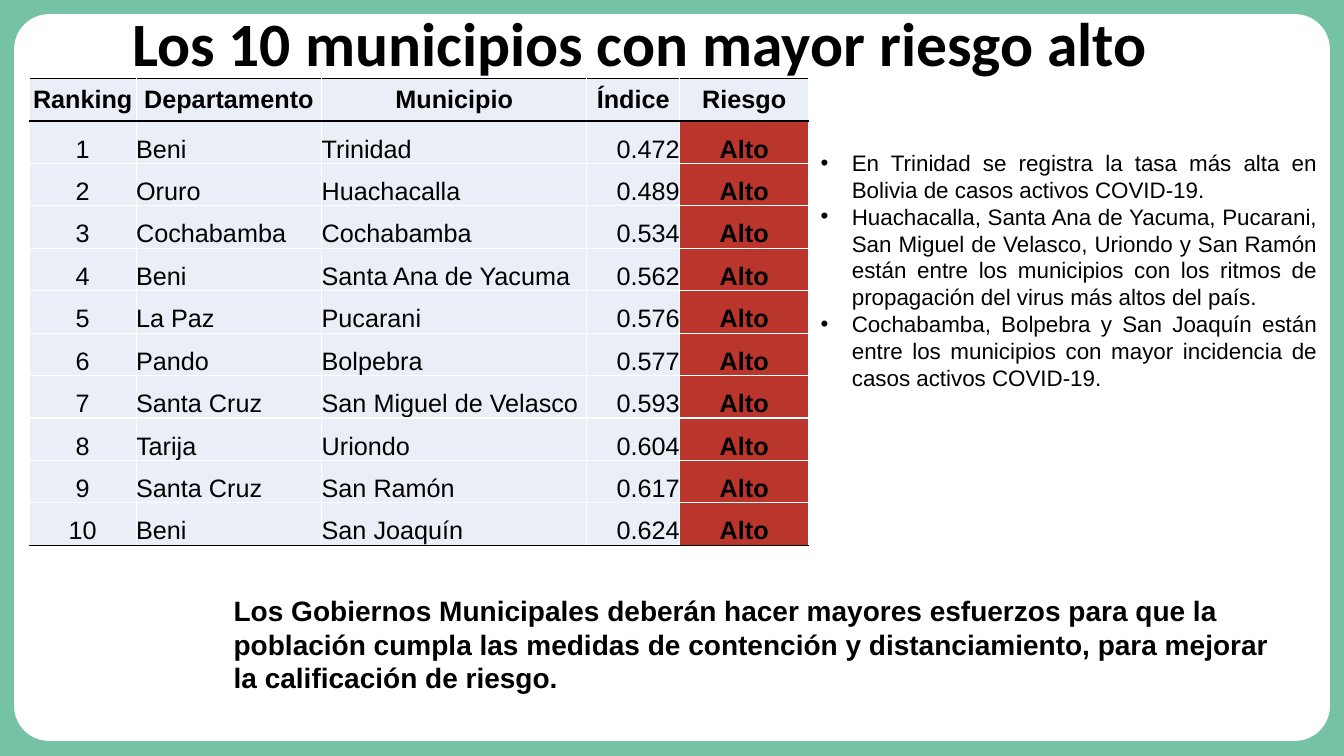
from pptx import Presentation, util as u
from pptx.dml.color import RGBColor
from pptx.enum import shapes, text
from pptx.oxml import parse_xml
from pptx.oxml.ns import nsdecls

GREEN = RGBColor(0x76, 0xC2, 0xA5)
WHITE = RGBColor(0xFF, 0xFF, 0xFF)
BLACK = RGBColor(0x00, 0x00, 0x00)
PALE = RGBColor(0xEA, 0xEF, 0xF7)
RED = RGBColor(0xBA, 0x36, 0x2C)
WIDE, HIGH = u.Inches(13.33), u.Inches(7.5)
ALIGN = text.PP_ALIGN
ANCHOR = text.MSO_ANCHOR

HEADS = ["Ranking", "Departamento", "Municipio", "Índice", "Riesgo"]
TOWNS = [
    ("Beni", "Trinidad", "0.472"),
    ("Oruro", "Huachacalla", "0.489"),
    ("Cochabamba", "Cochabamba", "0.534"),
    ("Beni", "Santa Ana de Yacuma", "0.562"),
    ("La Paz", "Pucarani", "0.576"),
    ("Pando", "Bolpebra", "0.577"),
    ("Santa Cruz", "San Miguel de Velasco", "0.593"),
    ("Tarija", "Uriondo", "0.604"),
    ("Santa Cruz", "San Ramón", "0.617"),
    ("Beni", "San Joaquín", "0.624"),
]
SHARES = [106, 184, 263, 92, 128]
SIDES = [ALIGN.CENTER, ALIGN.LEFT, ALIGN.LEFT, ALIGN.RIGHT, ALIGN.CENTER]
NOTES = [
    "En Trinidad se registra la tasa más alta en Bolivia de casos activos COVID-19.",
    "Huachacalla, Santa Ana de Yacuma, Pucarani, San Miguel de Velasco, Uriondo y San Ramón "
    "están entre los municipios con los ritmos de propagación del virus más altos del país.",
    "Cochabamba, Bolpebra y San Joaquín están entre los municipios con mayor incidencia de "
    "casos activos COVID-19.",
]
ADVICE = ("Los Gobiernos Municipales deberán hacer mayores esfuerzos para que la población "
          "cumpla las medidas de contención y distanciamiento, para mejorar la calificación "
          "de riesgo.")


def area(x, y, w, h):
    return [int(size * part / 100)
            for size, part in zip((WIDE, HIGH, WIDE, HIGH), (x, y, w, h))]


def apply(item, **values):
    for name, value in values.items():
        setattr(item, name, value)


def write(para, words, size, bold=False, side=ALIGN.LEFT, face="Arial"):
    para.alignment = side
    run = para.add_run()
    run.text = words
    apply(run.font, name=face, size=u.Pt(size), bold=bold)
    run.font.color.rgb = BLACK


def add_panel(slide, box):
    panel = slide.shapes.add_shape(shapes.MSO_SHAPE.ROUNDED_RECTANGLE, *box)
    panel.adjustments[0] = 0.048
    panel.shadow.inherit = False
    panel.fill.solid()
    panel.fill.fore_color.rgb = WHITE
    panel.line.fill.background()
    slide.shapes.title._element.addprevious(panel._element)


def add_title(slide, box):
    title = slide.shapes.title
    apply(title, **dict(zip(("left", "top", "width", "height"), box)))
    apply(title.text_frame, vertical_anchor=ANCHOR.MIDDLE,
          auto_size=text.MSO_AUTO_SIZE.NONE, word_wrap=True)
    para = title.text_frame.paragraphs[0]
    para.line_spacing = 0.9
    write(para, "Los 10 municipios con mayor riesgo alto", 44, True, face="Calibri")


def add_box(slide, box):
    frame = slide.shapes.add_textbox(*box).text_frame
    frame.word_wrap = True
    return frame


def add_notes(slide, box):
    frame = add_box(slide, box)
    for num, note in enumerate(NOTES):
        para = frame.add_paragraph() if num else frame.paragraphs[0]
        write(para, note, 16, side=ALIGN.JUSTIFY)
        props = para._p.get_or_add_pPr()
        indent = u.Inches(0.31)
        props.set("marL", str(indent))
        props.set("indent", str(-indent))
        for mark in ('buFont %s typeface="Arial"', 'buChar %s char="•"'):
            props.append(parse_xml(f"<a:{mark % nsdecls('a')}/>"))


def add_edges(cell, top, bottom):
    props = cell._tc.get_or_add_tcPr()
    for side, color in zip("LRTB", (WHITE, WHITE, top, bottom)):
        props.append(parse_xml(
            f'<a:ln{side} {nsdecls("a")} w="{u.Pt(1)}"><a:solidFill>'
            f'<a:srgbClr val="{color}"/></a:solidFill></a:ln{side}>'))


def add_ranks(slide, box):
    rows = [HEADS] + [(str(rank), *town, "Alto") for rank, town in enumerate(TOWNS, 1)]
    table = slide.shapes.add_table(len(rows), len(HEADS), *box).table
    table.horz_banding = False
    for col, share in zip(table.columns, SHARES):
        col.width = int(box[2] * share / sum(SHARES))
    for y, row in enumerate(rows):
        table.rows[y].height = int(box[3] / len(rows))
        for x, words in enumerate(row):
            cell = table.cell(y, x)
            head, risk = y == 0, y > 0 and x == len(HEADS) - 1
            apply(cell, margin_left=0, margin_right=0, margin_top=0, margin_bottom=0,
                  vertical_anchor=ANCHOR.MIDDLE if head else ANCHOR.BOTTOM)
            add_edges(cell, BLACK if y < 2 else WHITE,
                      BLACK if y in (0, len(rows) - 1) else WHITE)
            cell.fill.solid()
            cell.fill.fore_color.rgb = RED if risk else PALE
            write(cell.text_frame.paragraphs[0], words, 18, head or risk,
                  ALIGN.CENTER if head else SIDES[x])


def add_advice(slide, box):
    write(add_box(slide, box).paragraphs[0], ADVICE, 20, True)


def main():
    deck = Presentation()
    apply(deck, slide_width=WIDE, slide_height=HIGH)
    slide = deck.slides.add_slide(deck.slide_layouts[5])
    slide.background.fill.solid()
    slide.background.fill.fore_color.rgb = GREEN
    add_panel(slide, area(1.05, 1.87, 97.9, 96.13))
    add_title(slide, area(9.08, -1.33, 86.27, 14.93))
    add_notes(slide, area(60.32, 19.07, 38.41, 33.6))
    add_ranks(slide, area(2.18, 10.4, 58, 61.73))
    add_advice(slide, area(16.65, 77.87, 79.22, 14.8))
    deck.save("out.pptx")


if __name__ == "__main__":
    main()
